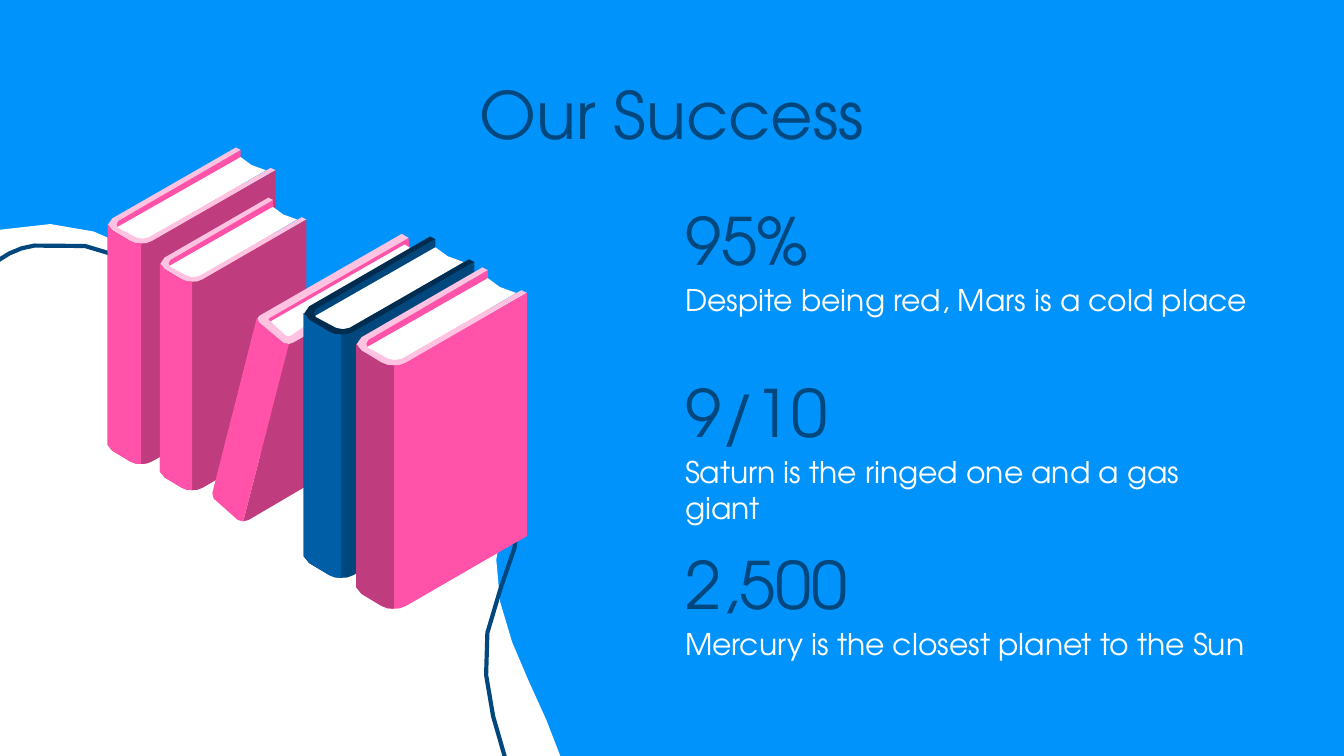
import math

from pptx import Presentation
from pptx.dml.color import RGBColor
from pptx.enum.text import MSO_ANCHOR, PP_ALIGN
from pptx.util import Cm, Pt

TOP, MIDDLE, BOTTOM = MSO_ANCHOR.TOP, MSO_ANCHOR.MIDDLE, MSO_ANCHOR.BOTTOM
LEFT, CENTER = PP_ALIGN.LEFT, PP_ALIGN.CENTER

SKY = RGBColor(0x00, 0x93, 0xFC)
WHITE = RGBColor(0xFF, 0xFF, 0xFF)
NAVY = RGBColor(0x00, 0x47, 0x7D)
DEEP_NAVY = RGBColor(0x00, 0x2D, 0x4F)
BLUE = RGBColor(0x00, 0x5E, 0xA6)
PINK = RGBColor(0xFF, 0x52, 0xA8)
PALE_PINK = RGBColor(0xFF, 0xC2, 0xE0)
DARK_PINK = RGBColor(0xBF, 0x3D, 0x7E)

FONT = "TeX Gyre Adventor"
UNIT = Cm(2.54)  # one drawing unit of the outlines
BLOB_STEPS = 8
CORNER_STEPS = 2

# An outline is a start point, then lines (x, y) and Bézier curves (six numbers).
# The blob is curved where it crosses the slide and straight beyond its edges.
BLOB_CENTER = (1.56, 5.16)
BLOB = [
    (4.13, 6.8), (4.25, 6.28),
    (4.36, 5.38, 3.46, 4.76, 3.75, 3.83), (4.01, 2.98, 3.62, 2.23, 2.56, 2.37),
    (1.39, 2.54, 1.09, 1.44, 0, 1.71), (-0.25, 1.77, -0.45, 2.03, -0.58, 2.39),
    (-0.73, 3.5), (-0.51, 4.74), (-0.52, 5.33), (-0.84, 6.03), (-0.9, 6.69),
    (0.18, 7.29), (0.62, 8.29), (2.43, 8.02),
]

# Leaning book, measured from the top of its spine.
LEANING_BOOK = [
    (PINK, [(1.13, -0.6), (0.07, 0), (0.1, 0.07), (1.14, -0.49)]),
    (WHITE, [(1.1, -0.55), (0.09, 0.03), (0.24, 0.15), (1.27, -0.45)]),
    (DARK_PINK, [
        (0.43, 0.09), (0.27, 0.18), (0.24, 0.19), (-0.1, 1.51), (-0.06, 1.5),
        (0.52, 1.16), (0.54, 1.15, 0.56, 1.12, 0.56, 1.1)]),
    (PINK, [
        (0, 0), (-0.33, 1.3), (-0.32, 1.34), (-0.14, 1.5), (-0.1, 1.51),
        (0.24, 0.19), (0.2, 0.18), (0.02, 0.03)]),
    (PALE_PINK, [
        (1.08, -0.63), (0.02, -0.02), (0, -0.01, 0, 0.01, 0.02, 0.03),
        (0.2, 0.18), (0.24, 0.19), (0.27, 0.18),
        (0.43, 0.09), (0.45, 0.08, 0.46, 0.06, 0.44, 0.05),
        (0.41, 0.04), (0.37, 0.05), (0.25, 0.13), (0.22, 0.13),
        (0.09, 0.01), (0.09, 0), (1.13, -0.6)]),
]

STATS = [
    ("95%", "Despite being red, Mars is a cold place"),
    ("9/10", "Saturn is the ringed one and a gas giant"),
    ("2,500", "Mercury is the closest planet to the Sun"),
]


def flatten(outline, steps=CORNER_STEPS):
    """Turn an outline with curves into a list of points."""
    points = [outline[0]]
    for step in outline[1:]:
        if len(step) == 2:
            points.append(step)
            continue
        x0, y0 = points[-1]
        x1, y1, x2, y2, x3, y3 = step
        for i in range(1, steps + 1):
            t = i / steps
            a, b, c, d = (1 - t) ** 3, 3 * t * (1 - t) ** 2, 3 * t * t * (1 - t), t ** 3
            points.append((a * x0 + b * x1 + c * x2 + d * x3,
                           a * y0 + b * y1 + c * y2 + d * y3))
    return points


def draw_polygon(shapes, left, top, points, fill=None, line=None):
    corners = [(round((left + x) * UNIT), round((top + y) * UNIT)) for x, y in points]
    builder = shapes.build_freeform(*corners[0])
    builder.add_line_segments(corners[1:], close=True)
    polygon = builder.convert_to_shape()
    polygon.shadow.inherit = False
    if fill is None:
        polygon.fill.background()
    else:
        polygon.fill.solid()
        polygon.fill.fore_color.rgb = fill
    if line is None:
        polygon.line.fill.background()
    else:
        polygon.line.color.rgb = line
        polygon.line.width = Pt(2.25)


def add_blob(shapes, center_x, center_y, degrees, **colors):
    cos, sin = math.cos(math.radians(degrees)), math.sin(math.radians(degrees))
    offsets = [(x - BLOB_CENTER[0], y - BLOB_CENTER[1]) for x, y in flatten(BLOB, BLOB_STEPS)]
    turned = [(x * cos - y * sin, x * sin + y * cos) for x, y in offsets]
    draw_polygon(shapes, center_x, center_y, turned, **colors)


def add_upright_book(shapes, left, top, thickness, depth, height, cover, spine, rim, back):
    """Draw a book whose spine starts at (left, top); depth runs to the upper right."""
    scale = thickness / 0.28
    far_x, far_y = thickness + depth, 0.57 * thickness - 0.545 * depth

    def near(*numbers):
        return tuple(n * scale for n in numbers)

    def far(*numbers):
        return tuple(n * scale + (far_y if i % 2 else far_x) for i, n in enumerate(numbers))

    def wall(edge):
        return edge + [(x, y + height) for x, y in reversed(edge)]

    spine_edge = flatten([
        near(0, 0), near(0.04, 0.05), near(0.19, 0.14),
        near(0.22, 0.16, 0.25, 0.16, 0.28, 0.16)])
    cover_edge = flatten([
        near(0.28, 0.16), near(0.31, 0.16, 0.34, 0.16, 0.37, 0.14), far(0, 0)])
    back_edge = [far(-0.29, -0.17), near(0.03, 0)]
    pages = flatten([
        far(-0.29, -0.11), near(0.07, 0.03), near(0.22, 0.13, 0.28, 0.15, 0.28, 0.15),
        far(-0.08, 0), far(-0.17, -0.02, -0.24, -0.06, -0.29, -0.11)])
    rim_band = flatten([
        far(-0.33, -0.19), near(0.04, -0.05), near(-0.01, -0.02, -0.01, 0.03, 0.04, 0.05),
        near(0.19, 0.14), near(0.22, 0.16, 0.25, 0.16, 0.28, 0.16),
        near(0.31, 0.16, 0.34, 0.16, 0.37, 0.14), far(0, 0), far(-0.04, -0.02),
        near(0.34, 0.11), near(0.29, 0.12), near(0.24, 0.11), near(0.09, 0.03),
        near(0.07, 0.01, 0.07, -0.01, 0.09, -0.03), far(-0.29, -0.17)])

    for points, color in [(wall(back_edge), back), (pages, WHITE), (rim_band, rim),
                          (wall(spine_edge + cover_edge[1:]), cover),
                          (wall(spine_edge), spine)]:
        draw_polygon(shapes, left, top, points, fill=color)


def add_bookshelf(shapes):
    shaded = dict(cover=DARK_PINK, spine=PINK, rim=PALE_PINK, back=PINK)
    navy = dict(cover=NAVY, spine=BLUE, rim=DEEP_NAVY, back=NAVY)
    bright = dict(cover=PINK, spine=DARK_PINK, rim=PALE_PINK, back=PINK)
    add_upright_book(shapes, 0.8, 1.67, 0.25, 1, 1.64, **shaded)
    add_upright_book(shapes, 1.19, 1.96, 0.24, 0.85, 1.55, **shaded)
    for color, outline in LEANING_BOOK:
        draw_polygon(shapes, 1.91, 2.37, flatten(outline), fill=color)
    add_upright_book(shapes, 2.26, 2.33, 0.28, 0.99, 1.81, **navy)
    add_upright_book(shapes, 2.65, 2.56, 0.28, 0.99, 1.81, **bright)


def add_text(shapes, left, top, width, height, words, size, color, anchor, align=LEFT):
    frame = shapes.add_textbox(Cm(left), Cm(top), Cm(width), Cm(height)).text_frame
    frame.word_wrap = True
    frame.vertical_anchor = anchor
    frame.margin_left = frame.margin_right = Cm(0.25)
    frame.margin_top = frame.margin_bottom = Cm(0.25)
    paragraph = frame.paragraphs[0]
    paragraph.alignment = align
    run = paragraph.add_run()
    run.text = words
    run.font.name = FONT
    run.font.size = Pt(size)
    run.font.color.rgb = color


def add_stat(shapes, left, top, figure, caption):
    add_text(shapes, left, top, 7.62, 2.11, figure, 35, NAVY, BOTTOM)
    add_text(shapes, left, top + 1.68, 11.3, 1.75, caption, 16, WHITE, TOP)


def main():
    deck = Presentation()
    deck.slide_width, deck.slide_height = Cm(25.4), Cm(14.29)
    slide = deck.slides.add_slide(deck.slide_layouts[6])
    slide.background.fill.solid()
    slide.background.fill.fore_color.rgb = SKY

    add_blob(slide.shapes, 1.56, 5.16, 0, fill=WHITE)
    add_blob(slide.shapes, 1.39, 5.44, 6.9, line=NAVY)
    add_bookshelf(slide.shapes)
    for row, (figure, caption) in enumerate(STATS):
        add_stat(slide.shapes, 12.7, 3.4 + 3.25 * row, figure, caption)
    add_text(slide.shapes, 3.2, 1.4, 19, 1.5, "Our Success", 35, NAVY, MIDDLE, CENTER)
    deck.save("out.pptx")


if __name__ == "__main__":
    main()
